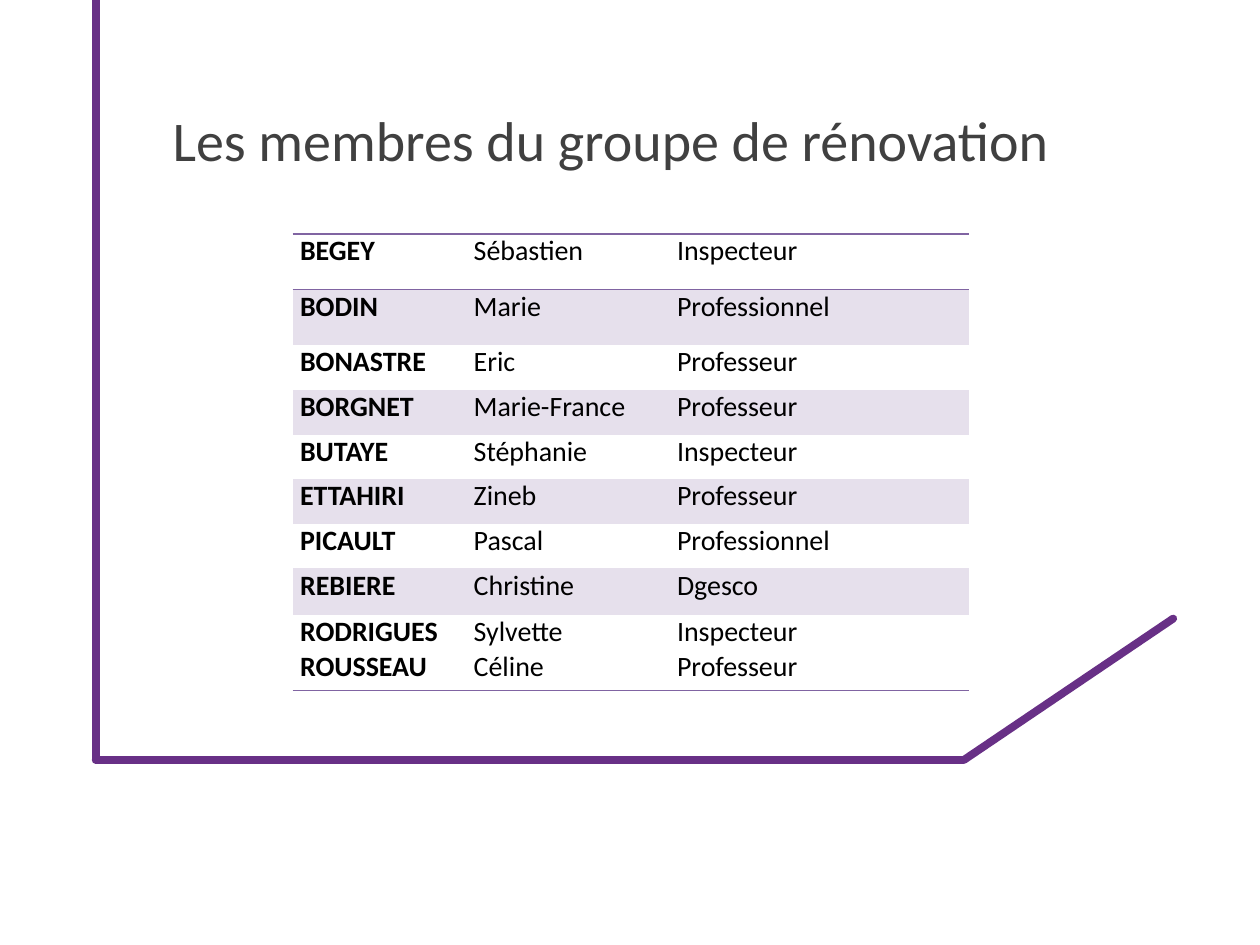
"""Build the slide listing the members of the renovation group."""
from typing import NamedTuple

from lxml import etree
from pptx import Presentation
from pptx.dml.color import RGBColor
from pptx.enum.shapes import MSO_CONNECTOR
from pptx.enum.text import MSO_ANCHOR, PP_ALIGN
from pptx.oxml.ns import qn
from pptx.slide import Slide
from pptx.table import _Cell
from pptx.text.text import TextFrame
from pptx.util import Cm, Pt

STRAIGHT = MSO_CONNECTOR.STRAIGHT
MIDDLE = MSO_ANCHOR.MIDDLE
LEFT = PP_ALIGN.LEFT
FONT = "Calibri"
FRAME_COLOR = "683086"
TITLE_COLOR = "404040"
TEXT_COLOR = "000000"
RULE_COLOR = "8064A2"
BAND_COLOR = "E6E0EC"
PLAIN_TABLE_STYLE = "{2D5ABB26-0587-4C30-8999-92F81FD0307C}"
COLUMN_WIDTHS = (3.5, 4.1, 6.03)


class FrameLine(NamedTuple):
    """End points of one frame line, in centimetres."""

    start_x: float
    start_y: float
    end_x: float
    end_y: float


class MemberRow(NamedTuple):
    """One table row: its texts, height in centimetres and ruled sides."""

    surname: str
    first_name: str
    role: str
    height: float = 0.9
    ruled_sides: tuple[str, ...] = ()


FRAME_LINES = (
    FrameLine(1.93, 15.32, 19.41, 15.32),
    FrameLine(19.43, 15.32, 23.65, 12.47),
    FrameLine(1.93, 15.3, 1.93, 0),
)

MEMBERS = (
    MemberRow("BEGEY", "Sébastien", "Inspecteur", 1.12, ("lnT", "lnB")),
    MemberRow("BODIN", "Marie", "Professionnel", 1.12),
    MemberRow("BONASTRE", "Eric", "Professeur"),
    MemberRow("BORGNET", "Marie-France", "Professeur"),
    MemberRow("BUTAYE", "Stéphanie", "Inspecteur"),
    MemberRow("ETTAHIRI", "Zineb", "Professeur"),
    MemberRow("PICAULT", "Pascal", "Professionnel"),
    MemberRow("REBIERE", "Christine", "Dgesco", 0.94),
    MemberRow("RODRIGUES\nROUSSEAU", "Sylvette\nCéline",
              "Inspecteur\nProfesseur", 1.52, ("lnB",)),
)


def rgb(color: str) -> RGBColor:
    """Turn a hex string into a colour."""
    return RGBColor.from_string(color)


def write_text(text_frame: TextFrame, text: str, size: float, color: str,
               bold: bool = False) -> None:
    """Set the text of a frame and format its runs."""
    text_frame.text = text
    for paragraph in text_frame.paragraphs:
        paragraph.alignment = LEFT
        for run in paragraph.runs:
            run.font.name = FONT
            run.font.size = Pt(size)
            run.font.bold = bold
            run.font.color.rgb = rgb(color)


def draw_frame_line(slide: Slide, line: FrameLine) -> None:
    """Draw one thick line with round ends."""
    connector = slide.shapes.add_connector(
        STRAIGHT, *(Cm(length) for length in line))
    connector.line.color.rgb = rgb(FRAME_COLOR)
    connector.line.width = Pt(4.5)
    properties = connector._element.spPr
    properties.find(qn("a:ln")).set("cap", "rnd")
    etree.SubElement(properties, qn("a:effectLst"))


def draw_title(slide: Slide, text: str) -> None:
    """Draw the slide title."""
    shape = slide.shapes.add_textbox(Cm(3.23), Cm(1.32), Cm(22.17), Cm(2.97))
    shape.text_frame.word_wrap = True
    shape.text_frame.vertical_anchor = MIDDLE
    write_text(shape.text_frame, text, 32, TITLE_COLOR)


def rule_cell(cell: _Cell, side: str) -> None:
    """Draw a thin rule on one side of a cell."""
    border = etree.SubElement(
        cell._tc.get_or_add_tcPr(), qn(side), w=str(Pt(1)))
    fill = etree.SubElement(border, qn("a:solidFill"))
    etree.SubElement(fill, qn("a:srgbClr"), val=RULE_COLOR)


def draw_member_table(slide: Slide, members: tuple[MemberRow, ...]) -> None:
    """Draw the banded table of members."""
    total_height = sum(member.height for member in members)
    table = slide.shapes.add_table(
        len(members), len(COLUMN_WIDTHS), Cm(5.9), Cm(4.72),
        Cm(sum(COLUMN_WIDTHS)), Cm(total_height)).table
    table.first_row = False
    table.horz_banding = False
    table._tbl.tblPr.find(qn("a:tableStyleId")).text = PLAIN_TABLE_STYLE
    for column, width in zip(table.columns, COLUMN_WIDTHS):
        column.width = Cm(width)
    for index, (row, member) in enumerate(zip(table.rows, members)):
        row.height = Cm(member.height)
        for position, (cell, text) in enumerate(zip(row.cells, member[:3])):
            cell.margin_left = cell.margin_right = Cm(0.15)
            cell.margin_top = cell.margin_bottom = Cm(0)
            write_text(cell.text_frame, text, 16, TEXT_COLOR, position == 0)
            for side in member.ruled_sides:
                rule_cell(cell, f"a:{side}")
            if index % 2:
                cell.fill.solid()
                cell.fill.fore_color.rgb = rgb(BAND_COLOR)
            else:
                cell.fill.background()


def main() -> None:
    """Build and save the presentation."""
    presentation = Presentation()
    presentation.slide_width = Cm(25.4)
    presentation.slide_height = Cm(19.05)
    slide = presentation.slides.add_slide(presentation.slide_layouts[6])
    for line in FRAME_LINES:
        draw_frame_line(slide, line)
    draw_title(slide, "Les membres du groupe de rénovation")
    draw_member_table(slide, MEMBERS)
    presentation.save("out.pptx")


if __name__ == "__main__":
    main()
